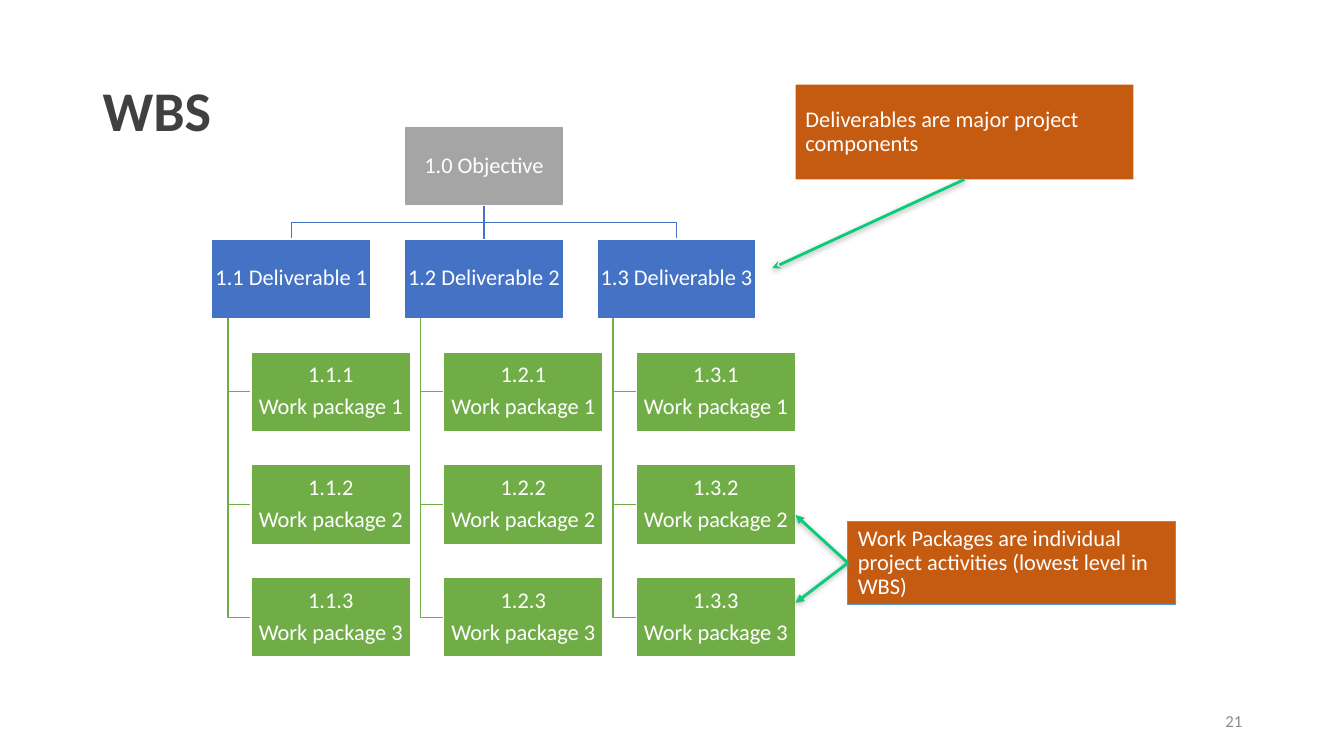
from dataclasses import dataclass
from typing import Optional

from lxml.etree import SubElement
from pptx import Presentation
from pptx.dml.color import RGBColor
from pptx.enum.shapes import MSO_CONNECTOR, MSO_SHAPE
from pptx.enum.text import MSO_ANCHOR, PP_ALIGN
from pptx.oxml.ns import qn
from pptx.util import Inches, Pt

COLORS = {
    "white": "FFFFFF", "title": "404041", "number": "8C8C8C",
    "objective": "A5A5A5", "deliverable": "4472C4", "package": "70AD47",
    "callout": "C55A11", "callout_edge": "5B9BD5",
    "arrow": "08CC78", "shadow": "808080",
}
NODE_W, NODE_H = 1.58, 0.79
LEFT, COL_STEP = 2.1, 1.91
TOP, ROW_STEP = 1.25, 1.12
PACKAGE_INDENT, TRUNK_INDENT = 0.39, 0.16
COUNT = 3


@dataclass
class TextStyle:
    size: float = 16
    color: str = "white"
    bold: bool = False
    align: PP_ALIGN = PP_ALIGN.LEFT
    spacing: float = 0.9
    after: float = 0
    inset: Optional[float] = None


@dataclass
class Box:
    lines: list[str]
    x: float
    y: float
    w: float
    h: float
    fill: str
    edge: Optional[str] = None


@dataclass
class Arrow:
    start: object
    site: int
    x: float
    y: float
    head: str


NODE_TEXT = TextStyle(align=PP_ALIGN.CENTER, after=5.6, inset=0.01)


def rgb(name: str) -> RGBColor:
    return RGBColor.from_string(COLORS[name])


def write(shape, lines: list[str], style: TextStyle) -> None:
    tf = shape.text_frame
    tf.word_wrap = True
    tf.vertical_anchor = MSO_ANCHOR.MIDDLE
    if style.inset is not None:
        for side in ("left", "top", "right", "bottom"):
            setattr(tf, f"margin_{side}", Inches(style.inset))
    para_format = {"alignment": style.align, "line_spacing": style.spacing,
                   "space_after": Pt(style.after)}
    font_format = {"name": "Calibri", "size": Pt(style.size), "bold": style.bold}
    for i, line in enumerate(lines):
        p = tf.add_paragraph() if i else tf.paragraphs[0]
        for attr, value in para_format.items():
            setattr(p, attr, value)
        r = p.add_run()
        r.text = line
        for attr, value in font_format.items():
            setattr(r.font, attr, value)
        r.font.color.rgb = rgb(style.color)


def add_text(s, text: str, x: float, y: float, w: float, h: float, style: TextStyle) -> None:
    write(s.shapes.add_textbox(Inches(x), Inches(y), Inches(w), Inches(h)), [text], style)


def add_box(s, box: Box, style: TextStyle, edge_width: float = 1):
    sp = s.shapes.add_shape(MSO_SHAPE.RECTANGLE, Inches(box.x), Inches(box.y),
                            Inches(box.w), Inches(box.h))
    sp.shadow.inherit = False
    sp.fill.solid()
    sp.fill.fore_color.rgb = rgb(box.fill)
    if box.edge:
        sp.line.color.rgb = rgb(box.edge)
        sp.line.width = Pt(edge_width)
    else:
        sp.line.fill.background()
    write(sp, box.lines, style)
    return sp


def add_node(s, lines: list[str], x: float, y: float, fill: str):
    return add_box(s, Box(lines, x, y, NODE_W, NODE_H, fill, "white"), NODE_TEXT)


def add_branch(s, points: list[tuple[float, float]], color: str) -> None:
    """Draw an open, right-angled tree line through the points."""
    corners = [(Inches(x), Inches(y)) for x, y in points]
    builder = s.shapes.build_freeform(*corners[0])
    builder.add_line_segments(corners[1:], close=False)
    sp = builder.convert_to_shape()
    sp.shadow.inherit = False
    sp.fill.background()
    sp.line.color.rgb = rgb(color)
    sp.line.width = Pt(1)


def add_line(s, start, site: int, x: float, y: float, color: str, width: float):
    """Draw a line from a side of start to a point; return it with its effect list."""
    line = s.shapes.add_connector(MSO_CONNECTOR.STRAIGHT, Inches(x), Inches(y),
                                  Inches(x), Inches(y))
    line.begin_connect(start, site)
    line.line.color.rgb = rgb(color)
    line.line.width = Pt(width)
    effects = SubElement(line._element.spPr, qn("a:effectLst"))
    return line, effects


def add_arrow(s, arrow: Arrow) -> None:
    line, effects = add_line(s, arrow.start, arrow.site, arrow.x, arrow.y, "arrow", 2)
    SubElement(line.line._get_or_add_ln(), qn("a:tailEnd"), type=arrow.head)
    shadow = SubElement(effects, qn("a:outerShdw"), blurRad=str(Pt(4)),
                        dist=str(Pt(1.2)), dir="5400000", rotWithShape="0")
    color = SubElement(shadow, qn("a:srgbClr"), val=COLORS["shadow"])
    SubElement(color, qn("a:alpha"), val="68000")


def add_tree(s) -> None:
    middle = LEFT + COL_STEP
    root_x, root_bottom = middle + NODE_W / 2, TOP + NODE_H
    deliverable_y = TOP + ROW_STEP
    bus_y = (root_bottom + deliverable_y) / 2
    root = add_node(s, ["1.0 Objective"], middle, TOP, "objective")

    for col in range(COUNT):
        x = LEFT + col * COL_STEP
        center = x + NODE_W / 2
        if col != COUNT // 2:
            add_branch(s, [(root_x, root_bottom), (root_x, bus_y),
                           (center, bus_y), (center, deliverable_y)], "deliverable")
        deliverable = add_node(s, [f"1.{col + 1} Deliverable {col + 1}"],
                               x, deliverable_y, "deliverable")
        if col == COUNT // 2:
            stem, _ = add_line(s, root, 2, center, deliverable_y, "deliverable", 1)
            stem.end_connect(deliverable, 0)

        trunk_x, package_x = x + TRUNK_INDENT, x + PACKAGE_INDENT
        for row in range(COUNT):
            y = deliverable_y + (row + 1) * ROW_STEP
            center_y = y + NODE_H / 2
            add_branch(s, [(trunk_x, deliverable_y + NODE_H), (trunk_x, center_y),
                           (package_x, center_y)], "package")
            add_node(s, [f"1.{col + 1}.{row + 1}", f"Work package {row + 1}"],
                     package_x, y, "package")


def main() -> None:
    prs = Presentation()
    prs.slide_width, prs.slide_height = Inches(13.33), Inches(7.5)
    s = prs.slides.add_slide(prs.slide_layouts[6])

    add_text(s, "WBS", 0.92, 0.4, 11.5, 1.45, TextStyle(40, "title", True))
    add_text(s, "21", 9.42, 6.95, 3, 0.4,
             TextStyle(12, "number", align=PP_ALIGN.RIGHT, spacing=1))
    add_tree(s)

    deliverable_note = add_box(
        s, Box(["Deliverables are major project components"],
               7.89, 0.84, 3.35, 0.94, "callout"), TextStyle())
    package_note = add_box(
        s, Box(["Work Packages are individual project activities (lowest level in WBS)"],
               8.41, 5.17, 3.25, 0.83, "callout", "callout_edge"), TextStyle(), 0.75)
    for arrow in (
        Arrow(deliverable_note, 2, 7.66, 2.66, "stealth"),
        Arrow(package_note, 1, 7.89, 5.11, "triangle"),
        Arrow(package_note, 1, 7.89, 5.98, "triangle"),
    ):
        add_arrow(s, arrow)

    prs.save("out.pptx")


if __name__ == "__main__":
    main()
